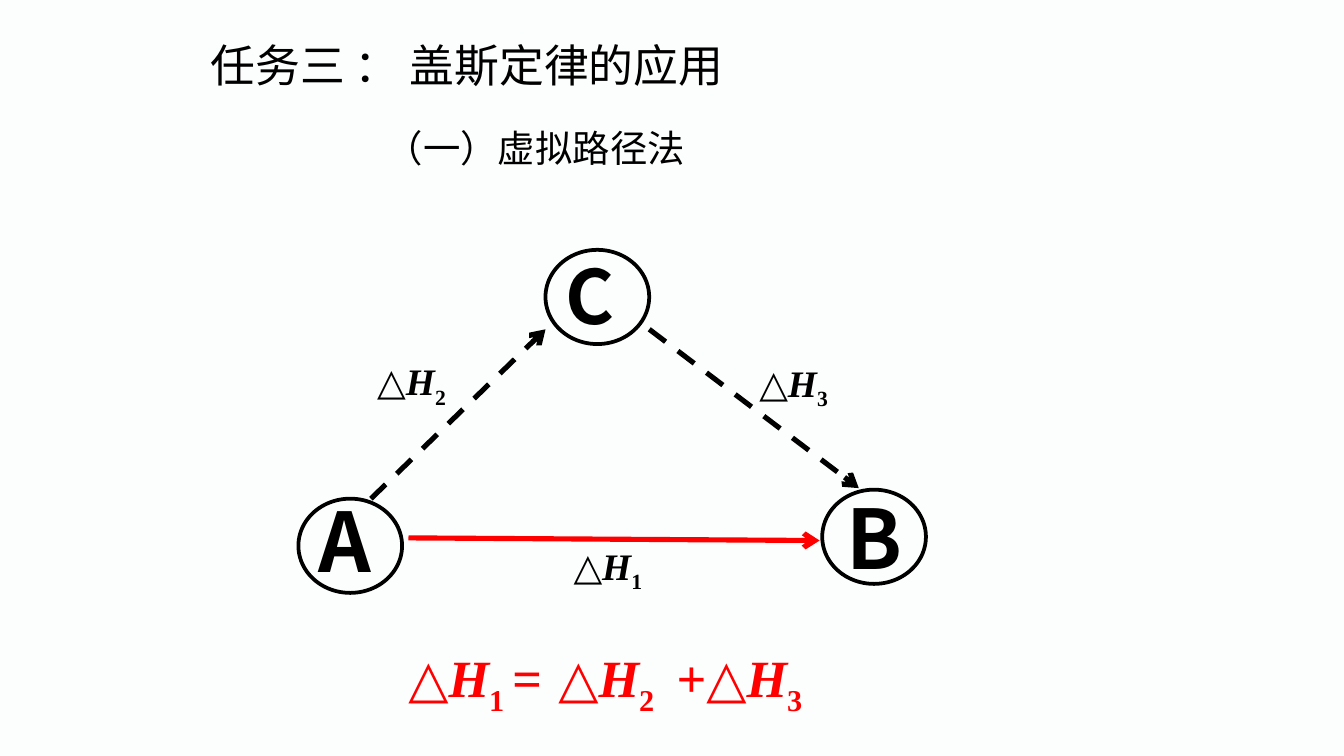
from lxml.etree import SubElement
from pptx import Presentation
from pptx.dml.color import RGBColor
from pptx.enum.dml import MSO_LINE
from pptx.enum.shapes import MSO_CONNECTOR, MSO_SHAPE
from pptx.enum.text import MSO_AUTO_SIZE
from pptx.oxml.ns import qn
from pptx.util import Cm, Pt

COLORS = {"background": "FCFDFD", "ink": "000000", "accent": "FF0000"}
SANS = "Noto Sans CJK SC"
SERIF = "Times New Roman"
STATE_WIDTH, STATE_HEIGHT = 1.96, 1.78


def rgb(name):
    return RGBColor.from_string(COLORS[name])


def add_text(slide, at, runs, size, font=SANS, color="ink", bold=False, wrap=True):
    """Add a text box; runs is a string or a list of (text, format) pairs."""
    box = slide.shapes.add_textbox(*(Cm(length) for length in at))
    frame = box.text_frame
    frame.word_wrap = wrap
    frame.auto_size = MSO_AUTO_SIZE.SHAPE_TO_FIT_TEXT
    if isinstance(runs, str):
        runs = [(runs, {})]
    for text, style in runs:
        run = frame.paragraphs[0].add_run()
        run.text = text
        run.font.size = Pt(style.get("size", size))
        run.font.bold = bold
        run.font.italic = style.get("italic", False)
        run.font.color.rgb = rgb(color)
        run.font.name = font
        properties = run.font._element
        SubElement(properties, qn("a:ea")).set("typeface", font)
        if style.get("subscript"):
            properties.set("baseline", "-25000")
        if "spacing" in style:
            properties.set("spc", str(style["spacing"] * 100))


def enthalpy(index):
    """Runs for ΔH with a subscript index."""
    return [("△", {}), ("H", {"italic": True}), (index, {"subscript": True})]


def add_state(slide, letter, left, top, letter_at, size):
    """Add a circled letter that stands for a state of the system."""
    circle = slide.shapes.add_shape(
        MSO_SHAPE.OVAL, Cm(left), Cm(top), Cm(STATE_WIDTH), Cm(STATE_HEIGHT))
    circle.shadow.inherit = False
    circle.fill.background()
    circle.line.color.rgb = rgb("ink")
    circle.line.width = Pt(2)
    add_text(slide, letter_at, letter, size=size, bold=True)


def add_path(slide, start, end, color="ink", dashed=False):
    """Add a reaction path with an arrowhead at its end."""
    path = slide.shapes.add_connector(
        MSO_CONNECTOR.STRAIGHT, *(Cm(length) for length in start + end))
    path.line.color.rgb = rgb(color)
    path.line.width = Pt(2.75)
    if dashed:
        path.line.dash_style = MSO_LINE.DASH
    SubElement(path.line._get_or_add_ln(), qn("a:tailEnd")).set("type", "arrow")
    SubElement(path._element.spPr, qn("a:effectLst"))


def main():
    prs = Presentation()
    prs.slide_width, prs.slide_height = Cm(25.4), Cm(14.28)
    slide = prs.slides.add_slide(prs.slide_layouts[6])
    slide.background.fill.solid()
    slide.background.fill.fore_color.rgb = rgb("background")

    law = (enthalpy("1 ") + [("=", {"italic": True}), (" ", {"size": 36})]
           + enthalpy("2") + [(" ", {"size": 36, "spacing": 3}), ("+", {})]
           + enthalpy("3"))
    add_text(slide, (7.47, 11.79, 9.91, 1.8), law, size=28, font=SERIF,
             color="accent", bold=True)

    add_state(slide, "A", 5.64, 9.42, (5.77, 9.14, 1.52, 2.13), size=44)
    add_state(slide, "B", 15.54, 9.25, (15.75, 9.09, 1.52, 2.13), size=44)
    add_state(slide, "C", 10.31, 4.72, (10.44, 4.6, 1.52, 1.96), size=40)

    add_path(slide, (7.72, 10.16), (15.49, 10.21), color="accent")
    add_path(slide, (7.01, 9.42), (10.31, 6.22), dashed=True)
    add_path(slide, (12.27, 6.22), (16.23, 9.22), dashed=True)

    for index, left, top in (("1", 10.59, 10.13), ("2", 6.88, 6.65), ("3", 14.1, 6.68)):
        add_text(slide, (left, top, 2.13, 1.12), enthalpy(index), size=20,
                 font=SERIF, bold=True, wrap=False)

    add_text(slide, (3.73, 0.58, 12.55, 1.27), "任务三 ： 盖斯定律的应用", size=24)
    add_text(slide, (7.04, 2.24, 7.8, 1.12), "（一）虚拟路径法", size=20)
    prs.save("out.pptx")


if __name__ == "__main__":
    main()
